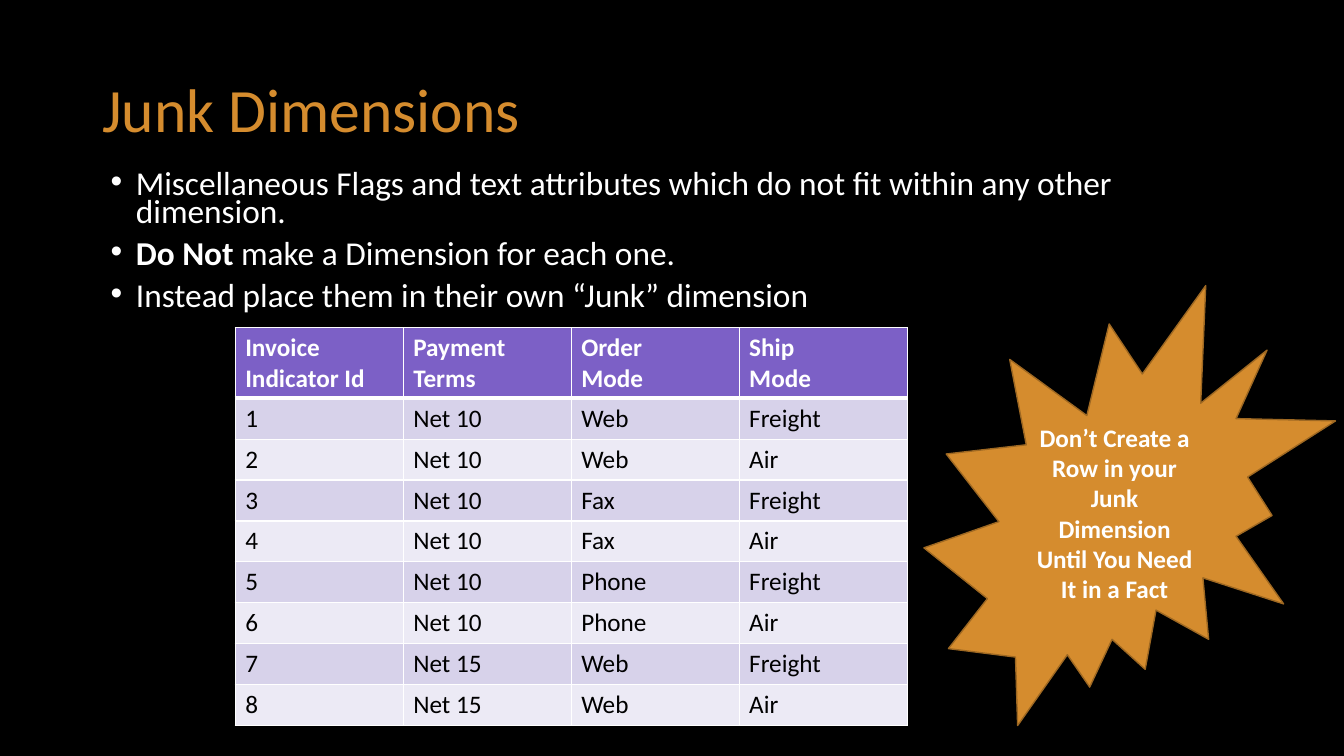
"""Build the Junk Dimensions slide."""
from lxml.etree import SubElement
from pptx import Presentation
from pptx.dml.color import RGBColor as RGB
from pptx.enum.shapes import MSO_SHAPE as SHAPE
from pptx.enum.text import MSO_ANCHOR as ANCHOR, PP_ALIGN as ALIGN
from pptx.oxml import parse_xml
from pptx.oxml.ns import nsdecls, qn
from pptx.util import Pt

PX = 9525
HUES = {
    "back": "000000", "gold": "D58C2E", "edge": "9E6822", "white": "FFFFFF",
    "head": "7C60C6", "odd": "D7D2EA", "even": "ECEAF5", "ink": "000000",
}
POINTS = [
    [("Miscellaneous Flags and text attributes which do not fit within any other dimension.", False)],
    [("Do Not ", True), ("make a Dimension for each one.", False)],
    [("Instead place them in their own “Junk” dimension", False)],
]
ROWS = [
    ("Invoice\vIndicator Id", "Payment \vTerms", "Order\vMode", "Ship\vMode"),
    ("1", "Net 10", "Web", "Freight"),
    ("2", "Net 10", "Web", "Air"),
    ("3", "Net 10", "Fax", "Freight"),
    ("4", "Net 10", "Fax", "Air"),
    ("5", "Net 10", "Phone", "Freight"),
    ("6", "Net 10", "Phone", "Air"),
    ("7", "Net 15", "Web", "Freight"),
    ("8", "Net 15", "Web", "Air"),
]


def box(*sides):
    return [side * PX for side in sides]


def style(para, size, hue, bold=False):
    for run in para.runs:
        run.font.name = "Calibri"
        run.font.size = Pt(size)
        run.font.bold = bold
        run.font.color.rgb = RGB.from_string(HUES[hue])


deck = Presentation()
deck.slide_width, deck.slide_height = box(1280, 720)
slide = deck.slides.add_slide(deck.slide_layouts[6])
slide.background.fill.solid()
slide.background.fill.fore_color.rgb = RGB.from_string(HUES["back"])

title = slide.shapes.add_textbox(*box(88, 38, 1104, 139)).text_frame
title.word_wrap = True
title.vertical_anchor = ANCHOR.MIDDLE
title.text = "Junk Dimensions"
title.paragraphs[0].line_spacing = 0.9
style(title.paragraphs[0], 44, "gold")

body = slide.shapes.add_textbox(*box(96, 160, 976, 152)).text_frame
body.word_wrap = True
for i, point in enumerate(POINTS):
    para = body.add_paragraph() if i else body.paragraphs[0]
    para.line_spacing = 0.7
    para.space_before = Pt(10)
    for text, bold in point:
        para.add_run().text = text
    style(para, 23.8, "white")
    for run, (text, bold) in zip(para.runs, point):
        run.font.bold = bold
    props = para._p.get_or_add_pPr()
    props.set("marL", str(24 * PX))
    props.set("indent", str(-24 * PX))
    SubElement(props, qn("a:buFont"), typeface="Arial")
    SubElement(props, qn("a:buChar"), char="•")

table = slide.shapes.add_table(len(ROWS), 4, *box(224, 312, 640, 379)).table
for r, row in enumerate(ROWS):
    table.rows[r].height = (39 if r else 67) * PX
    fill = ("even", "odd")[r % 2] if r else "head"
    for c, text in enumerate(row):
        cell = table.cell(r, c)
        cell.text_frame.text = text
        style(cell.text_frame.paragraphs[0], 18, "ink" if r else "white", r == 0)
        cell.fill.solid()
        cell.fill.fore_color.rgb = RGB.from_string(HUES[fill])
        props = cell._tc.get_or_add_tcPr()
        for i, side in enumerate("LRTB"):
            wide = 3 if (r, side) in ((0, "B"), (1, "T")) else 1
            props.insert(i, parse_xml(
                f'<a:ln{side} {nsdecls("a")} w="{Pt(wide)}"><a:solidFill>'
                f'<a:srgbClr val="{HUES["white"]}"/></a:solidFill></a:ln{side}>'))

burst = slide.shapes.add_shape(SHAPE.EXPLOSION2, *box(880, 272, 392, 419))
burst.shadow.inherit = False
burst.fill.solid()
burst.fill.fore_color.rgb = RGB.from_string(HUES["gold"])
burst.line.color.rgb = RGB.from_string(HUES["edge"])
burst.line.width = Pt(1)
note = burst.text_frame
note.word_wrap = True
note.vertical_anchor = ANCHOR.MIDDLE
note.text = "Don’t Create a Row in your Junk Dimension Until You Need It in a Fact"
note.paragraphs[0].alignment = ALIGN.CENTER
style(note.paragraphs[0], 18, "white", True)

deck.save("out.pptx")
